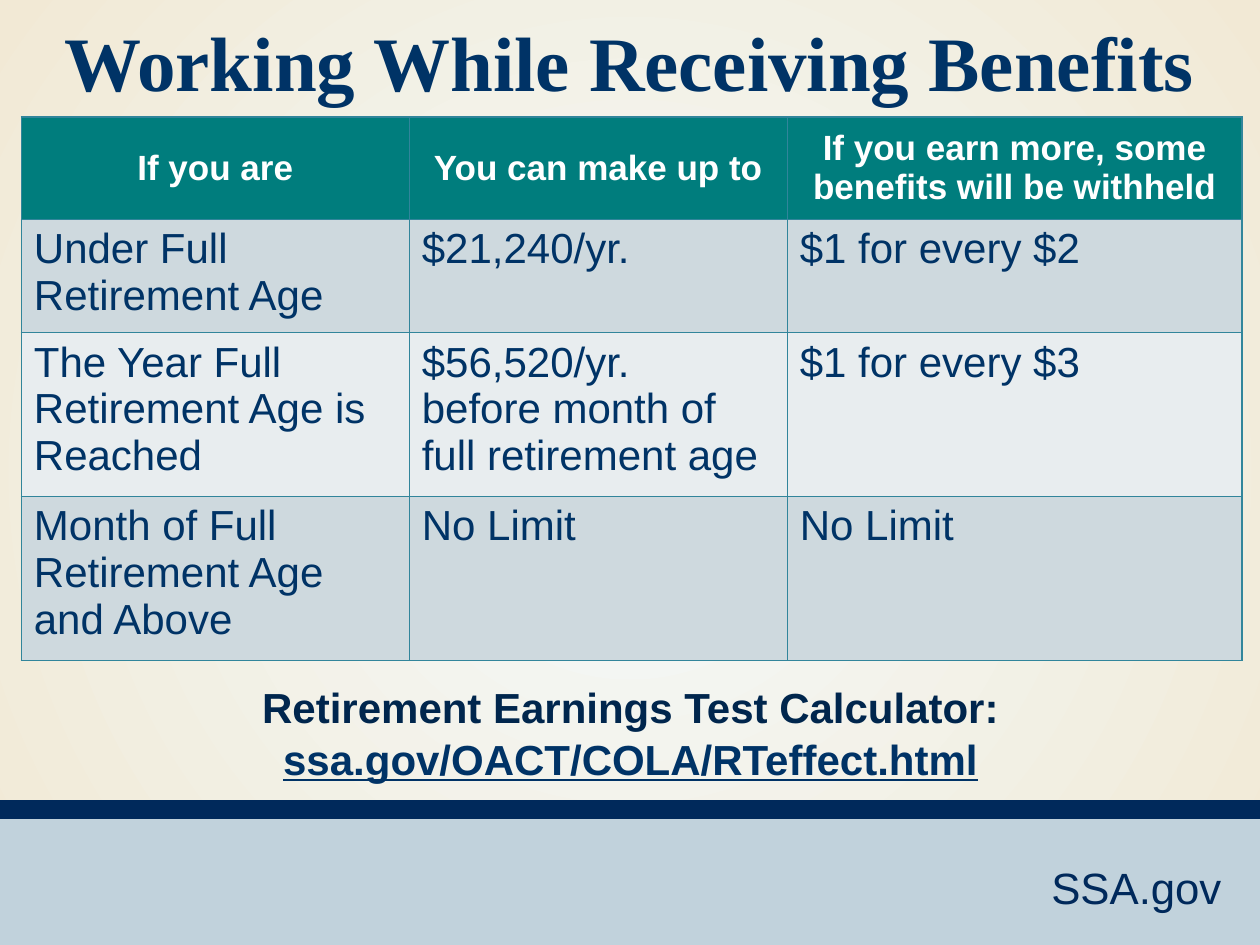
from lxml import etree
from pptx import Presentation
from pptx.dml.color import RGBColor
from pptx.enum.shapes import MSO_SHAPE
from pptx.enum.text import MSO_ANCHOR, PP_ALIGN
from pptx.oxml import parse_xml
from pptx.util import Cm, Pt

RECTANGLE = MSO_SHAPE.RECTANGLE
TOP, MIDDLE = MSO_ANCHOR.TOP, MSO_ANCHOR.MIDDLE
LEFT, CENTER, RIGHT = PP_ALIGN.LEFT, PP_ALIGN.CENTER, PP_ALIGN.RIGHT
DRAWING_NS = "http://schemas.openxmlformats.org/drawingml/2006/main"

NAVY, BLUE, DEEP_BLUE = "00295B", "003366", "00264D"
TEAL, BORDER, WHITE = "007D7D", "31859B", "FFFFFF"
BANDS = ("CED9DE", "E8EDEF")

COLUMN_WIDTHS = (7.82, 7.62, 9.17)
ROW_HEIGHTS = (2.06, 2.13, 3.08, 3.08)
EARNINGS_LIMITS = (
    ("If you are", "You can make up to",
     "If you earn more, some benefits will be withheld"),
    ("Under Full Retirement Age", "$21,240/yr.", "$1 for every $2"),
    ("The Year Full Retirement Age is Reached",
     "$56,520/yr.\vbefore month of full retirement age", "$1 for every $3"),
    ("Month of Full Retirement Age\vand Above", "No Limit", "No Limit"),
)


def color(hex_value):
    return RGBColor.from_string(hex_value)


def format_paragraph(paragraph, size, hex_value, align=LEFT, bold=False,
                     font="Arial", underline=False):
    paragraph.alignment = align
    for run in paragraph.runs:
        run.font.name = font
        run.font.size = Pt(size)
        run.font.bold = bold
        run.font.underline = underline
        run.font.color.rgb = color(hex_value)


def set_background(slide):
    fill = slide.background.fill
    fill.gradient()
    for stop, hex_value in zip(fill.gradient_stops, ("F3FAFB", "F2E9D5")):
        stop.color.rgb = color(hex_value)
    # Turn the linear gradient into one that spreads from the centre
    linear = slide.element.xpath(".//p:bgPr/a:gradFill/a:lin")[0]
    linear.getparent().replace(linear, parse_xml(
        f'<a:path xmlns:a="{DRAWING_NS}" path="circle">'
        '<a:fillToRect l="50000" t="50000" r="50000" b="50000"/></a:path>'))


def add_band(slide, top, height, hex_value):
    band = slide.shapes.add_shape(RECTANGLE, 0, Cm(top), Cm(25.4), Cm(height))
    band.shadow.inherit = False
    band.fill.solid()
    band.fill.fore_color.rgb = color(hex_value)
    band.line.fill.background()


def add_text(slide, left, top, width, height, text, inset_top):
    box = slide.shapes.add_textbox(Cm(left), Cm(top), Cm(width), Cm(height))
    frame = box.text_frame
    frame.word_wrap = True
    frame.vertical_anchor = TOP
    frame.margin_top = Cm(inset_top)
    frame.text = text
    return frame.paragraphs


def add_borders(cell):
    properties = cell._tc.get_or_add_tcPr()
    for position, side in enumerate(("lnL", "lnR", "lnT", "lnB")):
        border = etree.Element(f"{{{DRAWING_NS}}}{side}", w=str(Pt(1)))
        fill = etree.SubElement(border, f"{{{DRAWING_NS}}}solidFill")
        etree.SubElement(fill, f"{{{DRAWING_NS}}}srgbClr", val=BORDER)
        properties.insert(position, border)


def add_limits_table(slide):
    table = slide.shapes.add_table(
        len(ROW_HEIGHTS), len(COLUMN_WIDTHS), Cm(0.43), Cm(2.36),
        Cm(sum(COLUMN_WIDTHS)), Cm(sum(ROW_HEIGHTS))).table
    for column, width in zip(table.columns, COLUMN_WIDTHS):
        column.width = Cm(width)
    for row_index, texts in enumerate(EARNINGS_LIMITS):
        table.rows[row_index].height = Cm(ROW_HEIGHTS[row_index])
        is_header = row_index == 0
        for column_index, text in enumerate(texts):
            cell = table.cell(row_index, column_index)
            cell.text_frame.text = text
            cell.fill.solid()
            cell.fill.fore_color.rgb = color(
                TEAL if is_header else BANDS[(row_index - 1) % 2])
            cell.vertical_anchor = MIDDLE if is_header else TOP
            paragraph = cell.text_frame.paragraphs[0]
            if is_header:
                format_paragraph(paragraph, 20, WHITE, CENTER, bold=True)
            else:
                format_paragraph(paragraph, 24, BLUE)
            add_borders(cell)


def main():
    presentation = Presentation()
    presentation.slide_width, presentation.slide_height = Cm(25.4), Cm(19.05)
    slide = presentation.slides.add_slide(presentation.slide_layouts[6])
    set_background(slide)

    # Footer
    add_band(slide, 16.38, 2.67, "C1D2DC")
    add_band(slide, 16.13, 0.38, NAVY)
    site = add_text(slide, 17.07, 17.12, 7.8, 1.32, "SSA.gov", 0.23)
    format_paragraph(site[0], 25, NAVY, RIGHT)

    # Title
    title = add_text(slide, 0, 0, 25.4, 1.93,
                     "Working While Receiving Benefits", 0.3)
    format_paragraph(title[0], 44, BLUE, CENTER, bold=True,
                     font="Times New Roman")

    # Earnings limits
    add_limits_table(slide)

    # Calculator address
    heading, address = add_text(
        slide, 1.09, 13.54, 23.24, 2.54,
        "Retirement Earnings Test Calculator:\n"
        "ssa.gov/OACT/COLA/RTeffect.html", 0.2)
    format_paragraph(heading, 24, DEEP_BLUE, CENTER, bold=True)
    format_paragraph(address, 24, BLUE, CENTER, bold=True, underline=True)
    address.space_before = Pt(1)

    presentation.save("out.pptx")


if __name__ == "__main__":
    main()
